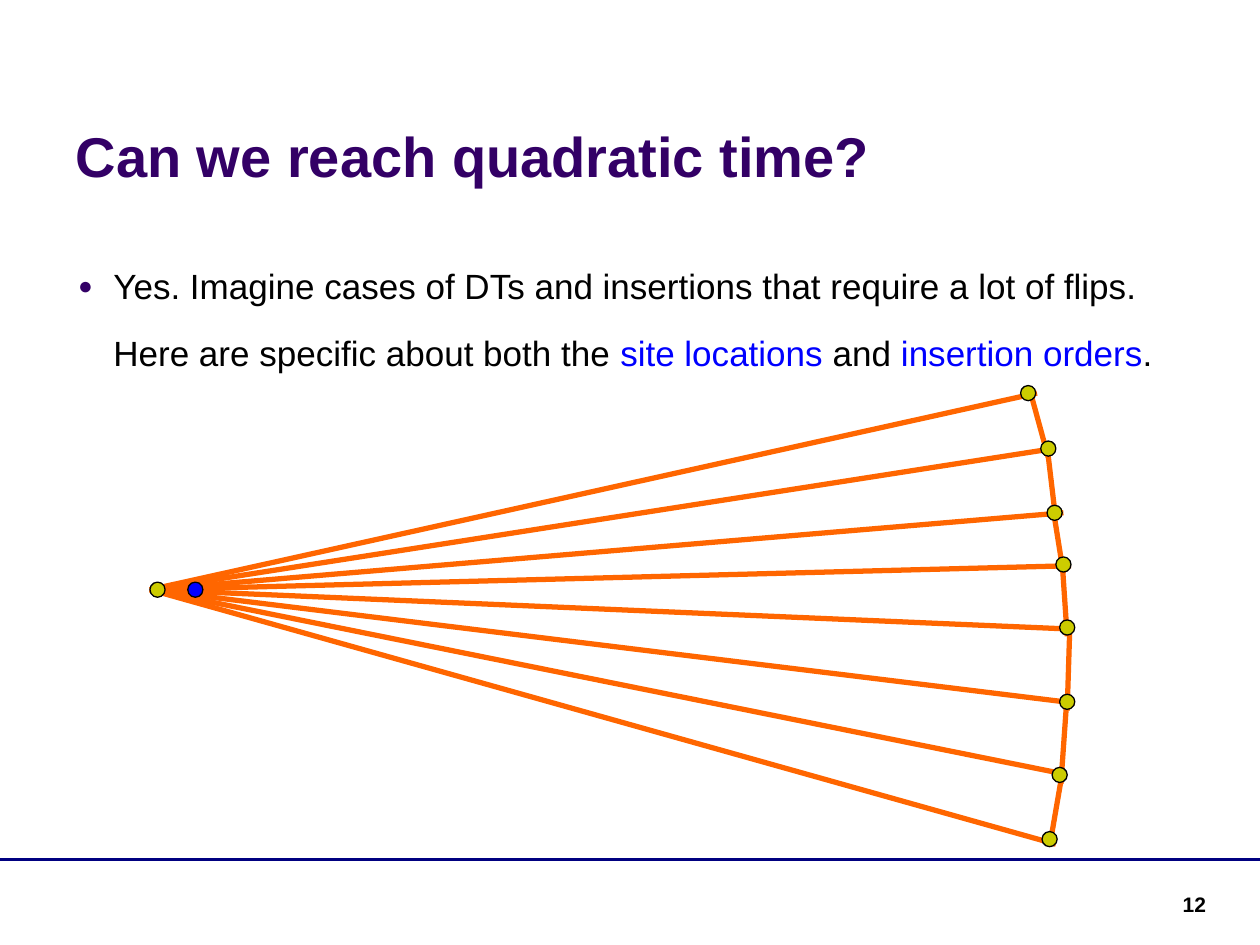
from dataclasses import dataclass
from typing import NamedTuple

from lxml import etree
from pptx import Presentation
from pptx.dml.color import RGBColor
from pptx.enum.shapes import MSO_CONNECTOR, MSO_SHAPE
from pptx.enum.text import MSO_ANCHOR, MSO_AUTO_SIZE, PP_ALIGN
from pptx.oxml.ns import qn
from pptx.util import Emu, Pt

LINE = MSO_CONNECTOR.STRAIGHT
OVAL = MSO_SHAPE.OVAL
TOP, BOTTOM = MSO_ANCHOR.TOP, MSO_ANCHOR.BOTTOM
LEFT, RIGHT = PP_ALIGN.LEFT, PP_ALIGN.RIGHT
NO_FIT = MSO_AUTO_SIZE.NONE
PX = 9144  # 100 px to the inch
DOT = 12


@dataclass(frozen=True)
class Theme:
    font: str = "Arial"
    title: str = "330066"
    text: str = "000000"
    mark: str = "0000FF"
    edge: str = "FF6600"
    site: str = "CCCC00"
    rule: str = "000080"
    title_pt: int = 32
    body_pt: int = 20
    page_pt: int = 12


class Point(NamedTuple):
    x: int
    y: int


class Edge(NamedTuple):
    start: Point
    end: Point


class Run(NamedTuple):
    text: str
    color: str


THEME = Theme()
APEX = Point(119, 468)
# Where each spoke from the apex ends, top to bottom
TIPS = [Point(*p) for p in (
    (823, 312), (830, 357), (844, 407), (850, 449),
    (843, 499), (853, 558), (843, 614), (838, 670))]
RIM = [Edge(Point(*a), Point(*b)) for a, b in (
    ((832, 363), (818, 312)), ((838, 413), (831, 354)),
    ((844, 455), (836, 405)), ((847, 505), (843, 446)),
    ((847, 564), (849, 500)), ((842, 622), (847, 551)),
    ((833, 672), (843, 614)))]
# Top left corners of the dots
SITES = [Point(*p) for p in (
    (119, 462), (810, 306), (826, 350), (831, 401), (838, 442),
    (841, 492), (841, 551), (835, 609), (827, 660))]
NEW_SITE = Point(149, 462)
BODY = [
    Run("Yes. Imagine cases of DTs and insertions that require a lot of flips. "
        "Here are specific about both the ", THEME.text),
    Run("site locations ", THEME.mark),
    Run("and ", THEME.text),
    Run("insertion orders", THEME.mark),
    Run(".", THEME.text),
]


def rgb(color: str) -> RGBColor:
    return RGBColor.from_string(color)


def place(shape, x: int, y: int, w: int, h: int) -> None:
    box = {"left": x, "top": y, "width": w, "height": h}
    for name, value in box.items():
        setattr(shape, name, Emu(value * PX))


def write(shape, runs: list[Run], size: int, bold=False, align=LEFT, anchor=TOP):
    """Fill a shape with one paragraph and return that paragraph."""
    frame = shape.text_frame
    style = {"word_wrap": True, "auto_size": NO_FIT, "vertical_anchor": anchor}
    for name, value in style.items():
        setattr(frame, name, value)
    para = frame.paragraphs[0]
    para.alignment = align
    for item in runs:
        run = para.add_run()
        run.text = item.text
        style = {"name": THEME.font, "size": Pt(size), "bold": bold}
        for name, value in style.items():
            setattr(run.font, name, value)
        run.font.color.rgb = rgb(item.color)
    return para


def bullet(para) -> None:
    para.line_spacing = 1.6
    para.space_before = Pt(4)
    props = para._p.get_or_add_pPr()
    for name, px in {"marL": 40, "indent": -28}.items():
        props.set(name, str(px * PX))
    tint = etree.SubElement(props, qn("a:buClr"))
    etree.SubElement(tint, qn("a:srgbClr"), val=THEME.title)
    etree.SubElement(props, qn("a:buSzPct"), val="70000")
    etree.SubElement(props, qn("a:buFont"), typeface=THEME.font)
    etree.SubElement(props, qn("a:buChar"), char="●")


def draw_edge(shapes, edge: Edge, color: str = THEME.edge, width: int = 3) -> None:
    ends = [Emu(v * PX) for v in (*edge.start, *edge.end)]
    line = shapes.add_connector(LINE, *ends)
    line.line.color.rgb = rgb(color)
    line.line.width = Pt(width)
    etree.SubElement(line._element.spPr, qn("a:effectLst"))


def draw_dot(shapes, spot: Point, color: str) -> None:
    dot = shapes.add_shape(OVAL, *(Emu(v * PX) for v in (*spot, DOT, DOT)))
    dot.shadow.inherit = False
    dot.fill.solid()
    dot.fill.fore_color.rgb = rgb(color)
    dot.line.color.rgb = rgb(THEME.text)
    dot.line.width = Pt(0.75)


def main() -> None:
    deck = Presentation()
    deck.slide_width, deck.slide_height = Emu(1000 * PX), Emu(750 * PX)
    slide = deck.slides.add_slide(deck.slide_layouts[1])
    shapes = slide.shapes

    title, body = shapes.title, slide.placeholders[1]
    place(title, 50, 13, 930, 142)
    write(title, [Run("Can we reach quadratic time?", THEME.title)],
          THEME.title_pt, bold=True, anchor=BOTTOM)
    place(body, 40, 185, 924, 489)
    bullet(write(body, BODY, THEME.body_pt))

    draw_edge(shapes, Edge(Point(0, 682), Point(1000, 682)), THEME.rule, 2)
    page = shapes.add_textbox(0, 0, 0, 0)
    place(page, 835, 703, 132, 28)
    write(page, [Run("12", THEME.text)], THEME.page_pt, bold=True, align=RIGHT)

    for edge in RIM + [Edge(APEX, tip) for tip in TIPS]:
        draw_edge(shapes, edge)
    for spot in SITES:
        draw_dot(shapes, spot, THEME.site)
    draw_dot(shapes, NEW_SITE, THEME.mark)
    deck.save("out.pptx")


if __name__ == "__main__":
    main()
